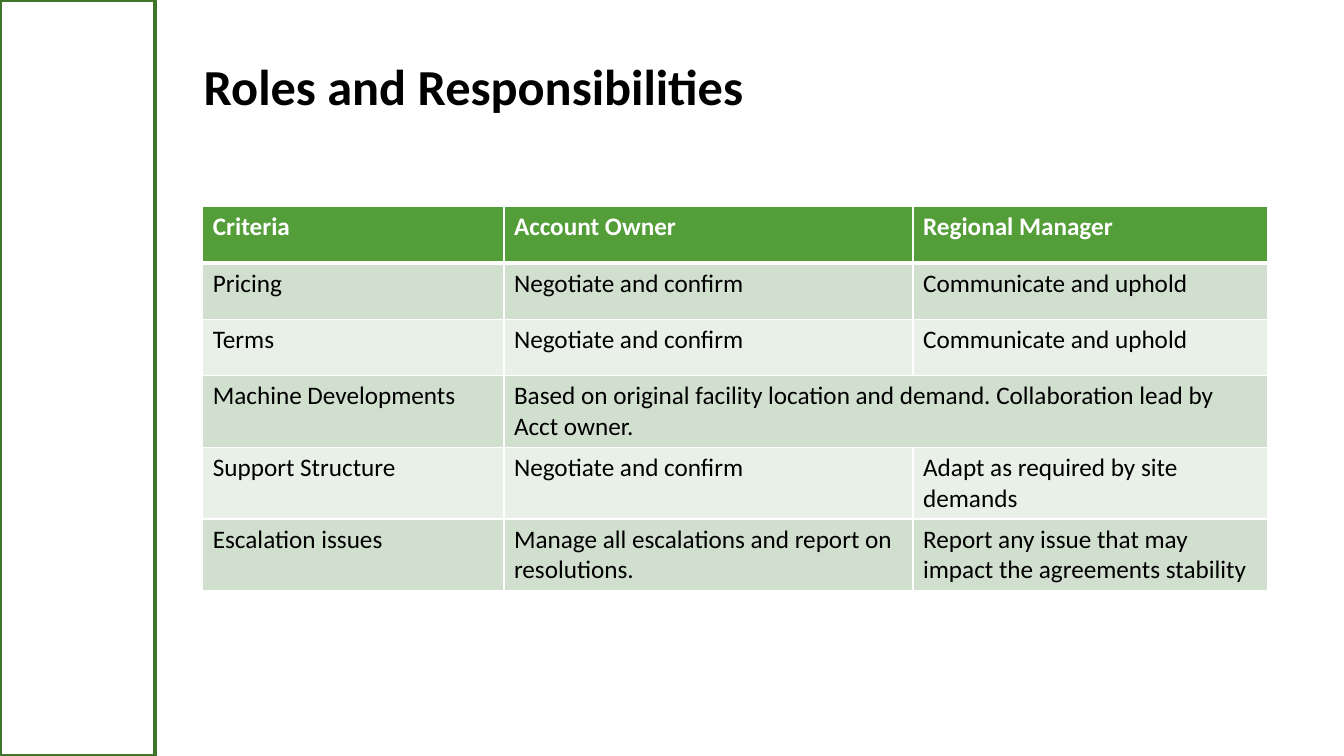
import pptx
import pptx.dml.color
import pptx.enum.shapes
import pptx.enum.text
import pptx.oxml
import pptx.oxml.ns
import pptx.util
from pptx.util import Cm

FONT = "Calibri"
COLORS = {
    "black": "000000",
    "white": "FFFFFF",
    "edge": "3E752A",
    "head": "549E39",
    "odd": "D1DFCE",
    "even": "E9F0E8",
}
WIDTHS = [7.59, 10.31, 8.94]
ROW = 1.42
ROWS = [
    ["Criteria", "Account Owner", "Regional Manager"],
    ["Pricing", "Negotiate and confirm", "Communicate and uphold"],
    ["Terms", "Negotiate and confirm", "Communicate and uphold"],
    ["Machine Developments",
     "Based on original facility location and demand. "
     "Collaboration lead by Acct owner.", None],
    ["Support Structure", "Negotiate and confirm",
     "Adapt as required by site demands"],
    ["Escalation issues",
     "Manage all escalations and report on resolutions.",
     "Report any issue that may impact the agreements stability"],
]


def color(name):
    return pptx.dml.color.RGBColor.from_string(COLORS[name])


def add_run(para, text, size, tint, bold):
    run = para.add_run()
    run.text = text
    run.font.name = FONT
    run.font.size = pptx.util.Pt(size)
    run.font.bold = bold
    run.font.color.rgb = color(tint)


def add_panel(slide):
    panel = slide.shapes.add_shape(
        pptx.enum.shapes.MSO_SHAPE.RECTANGLE, 0, 0, Cm(3.91), Cm(19.05))
    panel.shadow.inherit = False
    panel.fill.background()
    panel.line.color.rgb = color("edge")
    panel.line.width = pptx.util.Pt(3)


def add_title(slide, text):
    title = slide.shapes.title
    title.left, title.top = Cm(4.88), Cm(1.04)
    title.width, title.height = Cm(18.59), Cm(2.44)
    frame = title.text_frame
    frame.word_wrap = True
    frame.auto_size = pptx.enum.text.MSO_AUTO_SIZE.NONE
    frame.vertical_anchor = pptx.enum.text.MSO_ANCHOR.MIDDLE
    para = frame.paragraphs[0]
    para.alignment = pptx.enum.text.PP_ALIGN.LEFT
    para.line_spacing = 0.9
    add_run(para, text, 36, "black", True)


def set_edges(cell, top, base):
    """Draw white cell borders; top and base are widths in points."""
    props = cell._tc.get_or_add_tcPr()
    sides = [("L", 1), ("R", 1), ("T", top), ("B", base)]
    for place, (side, width) in enumerate(sides):
        props.insert(place, pptx.oxml.parse_xml(
            f'<a:ln{side} {pptx.oxml.ns.nsdecls("a")} '
            f'w="{pptx.util.Pt(width)}"><a:solidFill>'
            f'<a:srgbClr val="{COLORS["white"]}"/></a:solidFill></a:ln{side}>'))


def fill_cell(cell, text, row):
    head = row == 0
    cell.fill.solid()
    cell.fill.fore_color.rgb = color(
        "head" if head else "odd" if row % 2 else "even")
    set_edges(cell, 3 if row == 1 else 1, 3 if head else 1)
    if text:
        add_run(cell.text_frame.paragraphs[0], text, 18,
                "white" if head else "black", head)


def add_grid(slide):
    """Build the table; None joins a cell to the one on its left."""
    table = slide.shapes.add_table(
        len(ROWS), len(WIDTHS), Cm(5.11), Cm(5.21),
        Cm(sum(WIDTHS)), Cm(ROW * len(ROWS))).table
    for col, width in zip(table.columns, WIDTHS):
        col.width = Cm(width)
    for r, texts in enumerate(ROWS):
        table.rows[r].height = Cm(ROW)
        for c, text in enumerate(texts):
            fill_cell(table.cell(r, c), text, r)
            if text is None:
                table.cell(r, c - 1).merge(table.cell(r, c))


def main():
    deck = pptx.Presentation()
    deck.slide_width, deck.slide_height = Cm(33.87), Cm(19.05)
    slide = deck.slides.add_slide(deck.slide_layouts[5])
    add_panel(slide)
    add_title(slide, "Roles and Responsibilities")
    add_grid(slide)
    deck.save("out.pptx")


if __name__ == "__main__":
    main()
